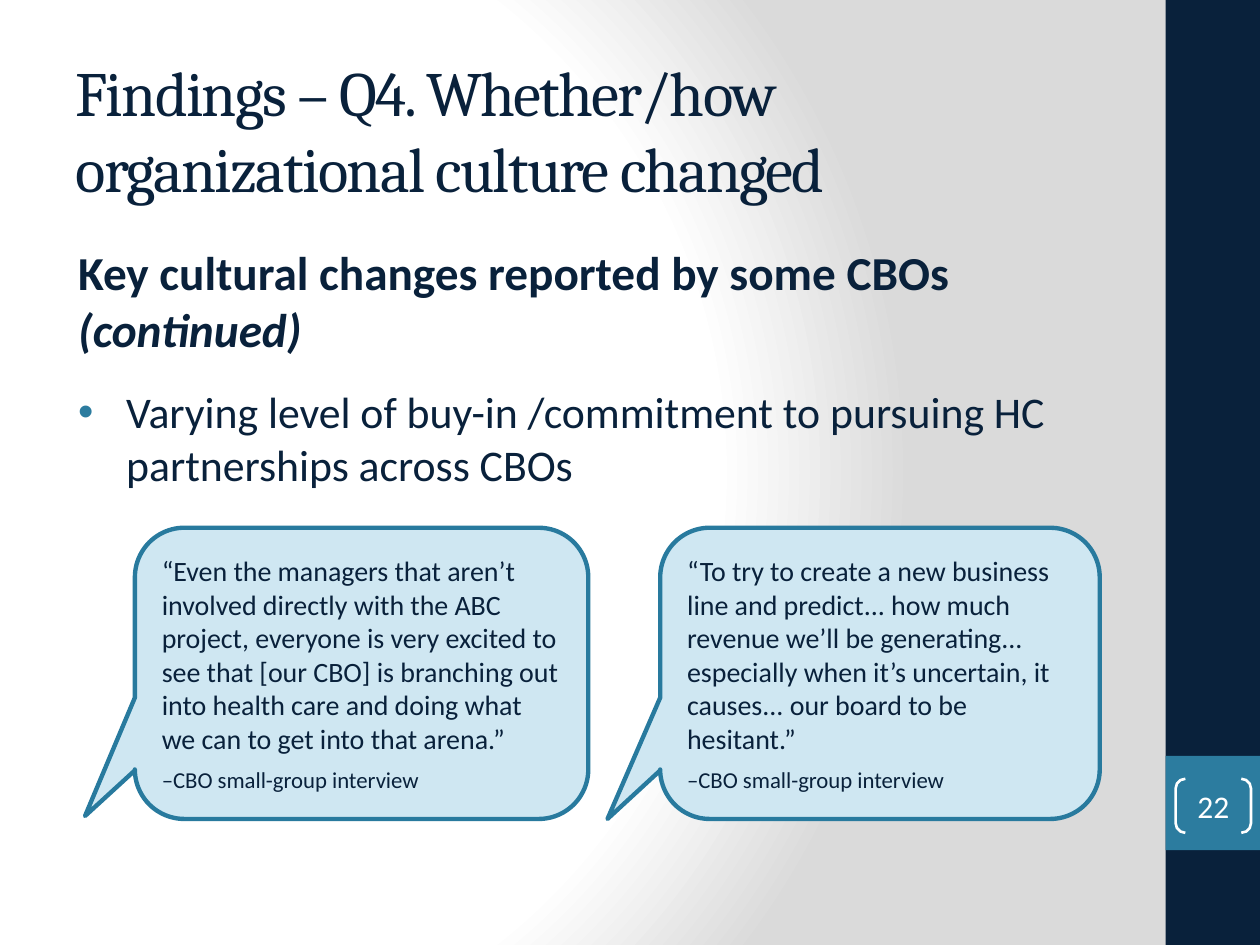
"""Build the findings slide on organizational culture with two interview quotes."""
from lxml.etree import SubElement
from pptx import Presentation
from pptx.dml.color import RGBColor
from pptx.enum.shapes import MSO_SHAPE
from pptx.enum.text import MSO_ANCHOR, MSO_AUTO_SIZE, PP_ALIGN
from pptx.oxml.ns import qn
from pptx.util import Cm, Pt

THEME = {
    "navy": RGBColor.from_string("09213B"),
    "teal": RGBColor.from_string("2C7C9F"),
    "outline": RGBColor.from_string("287A9E"),
    "pale": RGBColor.from_string("CFE7F2"),
    "white": RGBColor.from_string("FFFFFF"),
    "backdrop": [(0, "FFFFFF"), (75, "FFFFFF"), (100, "DADADA")],
    "heading_font": "Cambria",
    "body_font": "Calibri",
    "title": 36,
    "lead": 27,
    "bullet": 25,
    "number": 18,
    "quote": 16,
    "source": 13,
}


def write(para, text, size, color="navy", font="body_font", bold=False, italic=False,
          align=PP_ALIGN.LEFT, before=0):
    para.alignment = align
    para.space_before = Pt(before)
    span = para.add_run()
    span.text = text
    span.font.size = Pt(THEME[size])
    span.font.name = THEME[font]
    span.font.color.rgb = THEME[color]
    span.font.bold = bold
    span.font.italic = italic
    return span


def draw(kind, place, fill=None, line=None, width=0):
    shape = slide.shapes.add_shape(kind, *map(Cm, place))
    shape.shadow.inherit = False
    if fill:
        shape.fill.solid()
        shape.fill.fore_color.rgb = THEME[fill]
    else:
        shape.fill.background()
    if line:
        shape.line.color.rgb = THEME[line]
        shape.line.width = Pt(width)
    else:
        shape.line.fill.background()
    return shape


deck = Presentation()
deck.slide_width, deck.slide_height = Cm(25.4), Cm(19.05)
slide = deck.slides.add_slide(deck.slide_layouts[1])

slide.background.fill.gradient()
gradient = slide.element.find(".//" + qn("a:gradFill"))
for child in list(gradient):
    gradient.remove(child)
stops = SubElement(gradient, qn("a:gsLst"))
for position, shade in THEME["backdrop"]:
    stop = SubElement(stops, qn("a:gs"), pos=str(position * 1000))
    SubElement(stop, qn("a:srgbClr"), val=shade)
circle = SubElement(gradient, qn("a:path"), path="circle")
SubElement(circle, qn("a:fillToRect"), l="20000", t="50000", r="100000", b="50000")

draw(MSO_SHAPE.RECTANGLE, (23.5, 0, 1.9, 19.05), fill="navy")
draw(MSO_SHAPE.RECTANGLE, (23.5, 15.24, 1.9, 1.9), fill="teal")

title, body = slide.placeholders
for box, place, anchor in [
    (title, (1.27, 1.02, 21.16, 3.18), MSO_ANCHOR.MIDDLE),
    (body, (1.32, 4.78, 20.85, 5.44), MSO_ANCHOR.TOP),
]:
    box.left, box.top, box.width, box.height = map(Cm, place)
    box.text_frame.auto_size = MSO_AUTO_SIZE.NONE
    box.text_frame.vertical_anchor = anchor

heading = write(title.text_frame.paragraphs[0],
                "Findings – Q4. Whether/how organizational culture changed",
                size="title", font="heading_font")
heading.font._element.set("spc", "-100")

lead = body.text_frame.paragraphs[0]
write(lead, "Key cultural changes reported by some CBOs ", size="lead", bold=True, before=16)
write(lead, "(continued)", size="lead", bold=True, italic=True, before=16)
bullet = body.text_frame.add_paragraph()
write(bullet, "Varying level of buy-in /commitment to pursuing HC partnerships across CBOs",
      size="bullet", before=16)

for para, margin in [(lead, 0), (bullet, Cm(0.97))]:
    properties = para._p.get_or_add_pPr()
    properties.set("marL", str(margin))
    properties.set("indent", str(-margin))
    if margin:
        tint = SubElement(properties, qn("a:buClr"))
        SubElement(tint, qn("a:srgbClr"), val=str(THEME["teal"]))
        SubElement(properties, qn("a:buFont"), typeface="Arial")
        SubElement(properties, qn("a:buChar"), char="•")
    else:
        SubElement(properties, qn("a:buNone"))

bracket = draw(MSO_SHAPE.DOUBLE_BRACKET, (23.7, 15.7, 1.52, 1.09), line="white", width=1.5)
bracket.adjustments[0] = 0.18
frame = bracket.text_frame
frame.margin_left = frame.margin_top = frame.margin_right = frame.margin_bottom = 0
frame.vertical_anchor = MSO_ANCHOR.MIDDLE
write(frame.paragraphs[0], "22", size="number", color="white", align=PP_ALIGN.CENTER)

quotes = [
    (13.31, 8.86, (-0.62, 0.5, 0.17),
     "“To try to create a new business line and predict... how much revenue we’ll be "
     "generating... especially when it’s uncertain, it causes... our board to be hesitant.”"),
    (2.72, 9.14, (-0.61, 0.49, 0.17),
     "“Even the managers that aren’t involved directly with the ABC project, everyone is "
     "very excited to see that [our CBO] is branching out into health care and doing what "
     "we can to get into that arena.”"),
]
for left, width, tail, quote in quotes:
    callout = draw(MSO_SHAPE.ROUNDED_RECTANGULAR_CALLOUT, (left, 10.64, width, 5.87),
                   fill="pale", line="outline", width=2.5)
    for index, value in enumerate(tail):
        callout.adjustments[index] = value
    frame = callout.text_frame
    frame.word_wrap = True
    frame.vertical_anchor = MSO_ANCHOR.MIDDLE
    write(frame.paragraphs[0], quote, size="quote")
    write(frame.add_paragraph(), "–CBO small-group interview", size="source", before=6)

deck.save("out.pptx")
